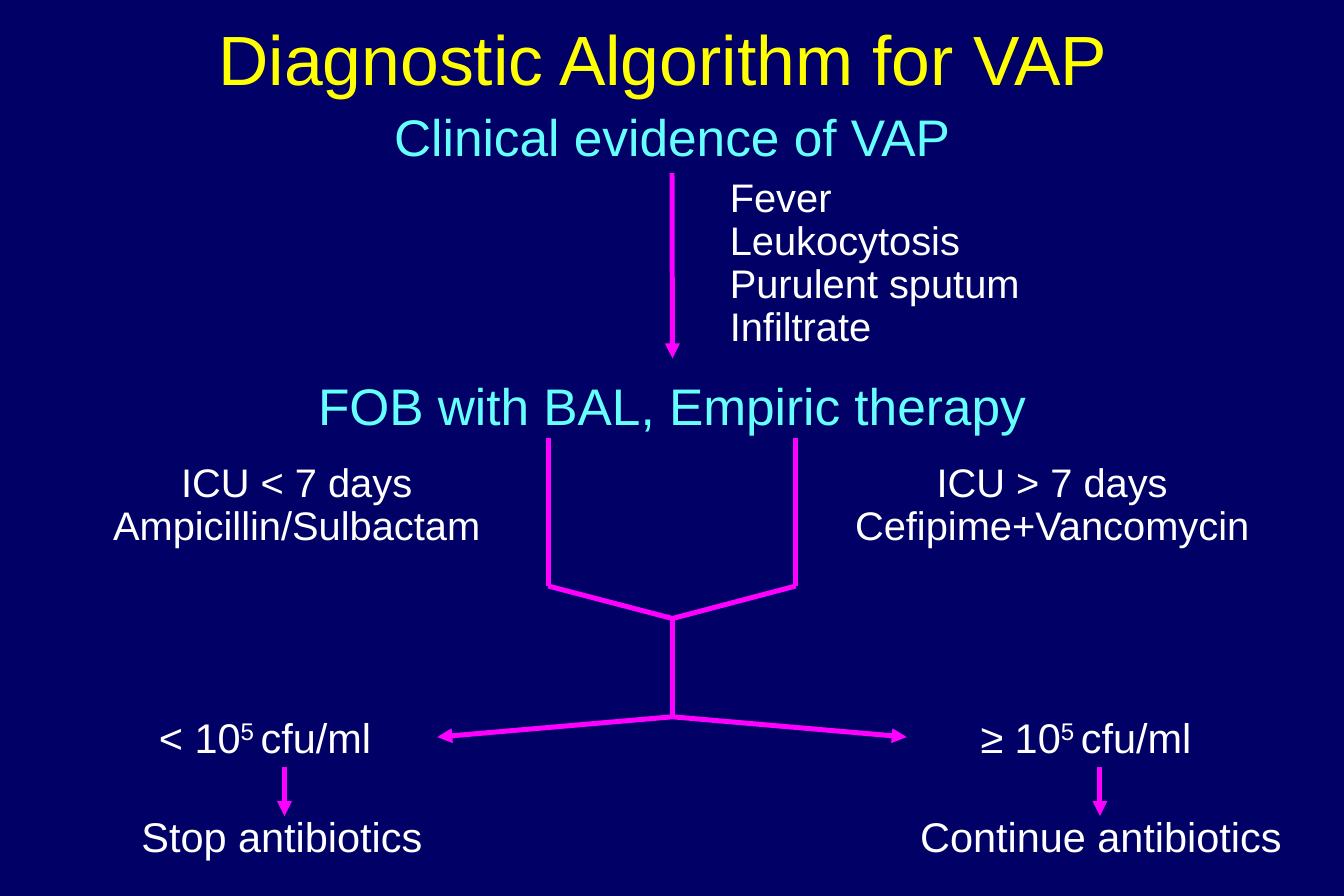
from dataclasses import dataclass

from lxml.etree import SubElement
from pptx import Presentation
from pptx.dml.color import RGBColor
from pptx.enum.shapes import MSO_CONNECTOR
from pptx.enum.text import MSO_ANCHOR, MSO_AUTO_SIZE, PP_ALIGN
from pptx.oxml.ns import qn
from pptx.shapes.autoshape import Shape
from pptx.shapes.connector import Connector
from pptx.slide import Slide
from pptx.util import Cm, Pt

NAVY = RGBColor(0x00, 0x00, 0x66)
YELLOW = RGBColor(0xFF, 0xFF, 0x00)
CYAN = RGBColor(0x66, 0xFF, 0xFF)
WHITE = RGBColor(0xFF, 0xFF, 0xFF)
MAGENTA = RGBColor(0xFF, 0x00, 0xFF)

FONT = "Arial"
SUPERSCRIPT_MARK = "^"
SLIDE_WIDTH = 28.58
SLIDE_HEIGHT = 19.05

CENTER_X = 14.3
LEFT_X, RIGHT_X = 11.66, 16.92
FORK_TOP, FORK_BEND, FORK_JOIN = 9.32, 12.46, 13.15
SPLIT_Y, SPLIT_END = 15.24, 15.67
RESULT_Y, ACTION_Y = 16.31, 17.35


@dataclass(frozen=True)
class Label:
    lines: tuple[str, ...]
    left: float
    top: float
    width: float
    height: float
    size: int
    color: RGBColor = WHITE
    align: PP_ALIGN = PP_ALIGN.CENTER
    spacing: float = 1.0
    wrap: bool = True


@dataclass(frozen=True)
class Line:
    x1: float
    y1: float
    x2: float
    y2: float
    arrow: bool = False


TITLE = Label(("Diagnostic Algorithm for VAP ",), 0, 0.2, SLIDE_WIDTH, 2.03, 42, YELLOW)
EVIDENCE = Label(("Clinical evidence of VAP",), 0, 2.11, SLIDE_WIDTH, 1.57, 31, CYAN)
LABELS = (
    Label(("Fever", "Leukocytosis", "Purulent sputum", "Infiltrate"),
          15.27, 3.66, 6.73, 3.96, 24, align=PP_ALIGN.LEFT, spacing=0.9, wrap=False),
    Label(("FOB with BAL, Empiric therapy",), 0, 7.82, SLIDE_WIDTH, 1.57, 31, CYAN),
    Label(("ICU < 7 days", "Ampicillin/Sulbactam"), 0.71, 9.73, 11.2, 2.13, 24, spacing=0.9),
    Label(("ICU > 7 days", "Cefipime+Vancomycin"), 16.66, 9.73, 11.43, 2.13, 24, spacing=0.9),
    Label(("< 10^5 ^cfu/ml",), 3.07, 14.96, 5.13, 1.37, 25, spacing=1.05, wrap=False),
    Label((" ≥ 10^5 ^cfu/ml",), 20.19, 14.96, 5.56, 1.37, 25, spacing=1.05, wrap=False),
    Label(("Stop antibiotics",), 1.7, 17.12, 8.59, 1.32, 25, wrap=False),
    Label(("Continue antibiotics",), 18.75, 17.12, 9.32, 1.32, 25, wrap=False),
)

EVIDENCE_ARROW = Line(CENTER_X, 3.68, CENTER_X, 7.62, True)
LINES = (
    Line(LEFT_X, FORK_TOP, LEFT_X, FORK_BEND),
    Line(RIGHT_X, FORK_TOP, RIGHT_X, FORK_BEND),
    Line(LEFT_X, FORK_BEND, CENTER_X, FORK_JOIN),
    Line(RIGHT_X, FORK_BEND, CENTER_X, FORK_JOIN),
    Line(CENTER_X, FORK_JOIN, CENTER_X, SPLIT_Y),
    Line(CENTER_X, SPLIT_Y, 9.3, SPLIT_END, True),
    Line(CENTER_X, SPLIT_Y, 19.28, SPLIT_END, True),
    Line(6.05, RESULT_Y, 6.05, ACTION_Y, True),
    Line(23.39, RESULT_Y, 23.39, ACTION_Y, True),
)


def write_label(shape: Shape, label: Label) -> None:
    shape.left, shape.top = Cm(label.left), Cm(label.top)
    shape.width, shape.height = Cm(label.width), Cm(label.height)
    text_frame = shape.text_frame
    text_frame.text = "\n".join(label.lines)
    text_frame.word_wrap = label.wrap
    text_frame.auto_size = MSO_AUTO_SIZE.SHAPE_TO_FIT_TEXT
    text_frame.vertical_anchor = MSO_ANCHOR.TOP
    for paragraph, line in zip(text_frame.paragraphs, label.lines):
        paragraph.alignment = label.align
        paragraph.line_spacing = label.spacing
        pieces = line.split(SUPERSCRIPT_MARK)
        paragraph.text = pieces[0]
        for piece in pieces[1:]:
            paragraph.add_run().text = piece
        for index, run in enumerate(paragraph.runs):
            run.font.name = FONT
            run.font.size = Pt(label.size)
            run.font.color.rgb = label.color
            if index % 2:
                run.font._element.set("baseline", "30000")


def add_label(slide: Slide, label: Label) -> Shape:
    shape = slide.shapes.add_textbox(0, 0, Cm(label.width), Cm(label.height))
    write_label(shape, label)
    return shape


def add_line(slide: Slide, line: Line) -> Connector:
    connector = slide.shapes.add_connector(
        MSO_CONNECTOR.STRAIGHT, Cm(line.x1), Cm(line.y1), Cm(line.x2), Cm(line.y2))
    connector.line.color.rgb = MAGENTA
    connector.line.width = Pt(3)
    properties = connector._element.spPr
    if line.arrow:
        SubElement(properties.find(qn("a:ln")), qn("a:tailEnd"), type="triangle")
    SubElement(properties, qn("a:effectLst"))
    return connector


def main() -> None:
    presentation = Presentation()
    presentation.slide_width = Cm(SLIDE_WIDTH)
    presentation.slide_height = Cm(SLIDE_HEIGHT)
    slide = presentation.slides.add_slide(presentation.slide_layouts.get_by_name("Title Only"))
    slide.background.fill.solid()
    slide.background.fill.fore_color.rgb = NAVY

    write_label(slide.shapes.title, TITLE)
    evidence = add_label(slide, EVIDENCE)
    add_line(slide, EVIDENCE_ARROW).begin_connect(evidence, 2)
    for label in LABELS:
        add_label(slide, label)
    for line in LINES:
        add_line(slide, line)
    presentation.save("out.pptx")


if __name__ == "__main__":
    main()
